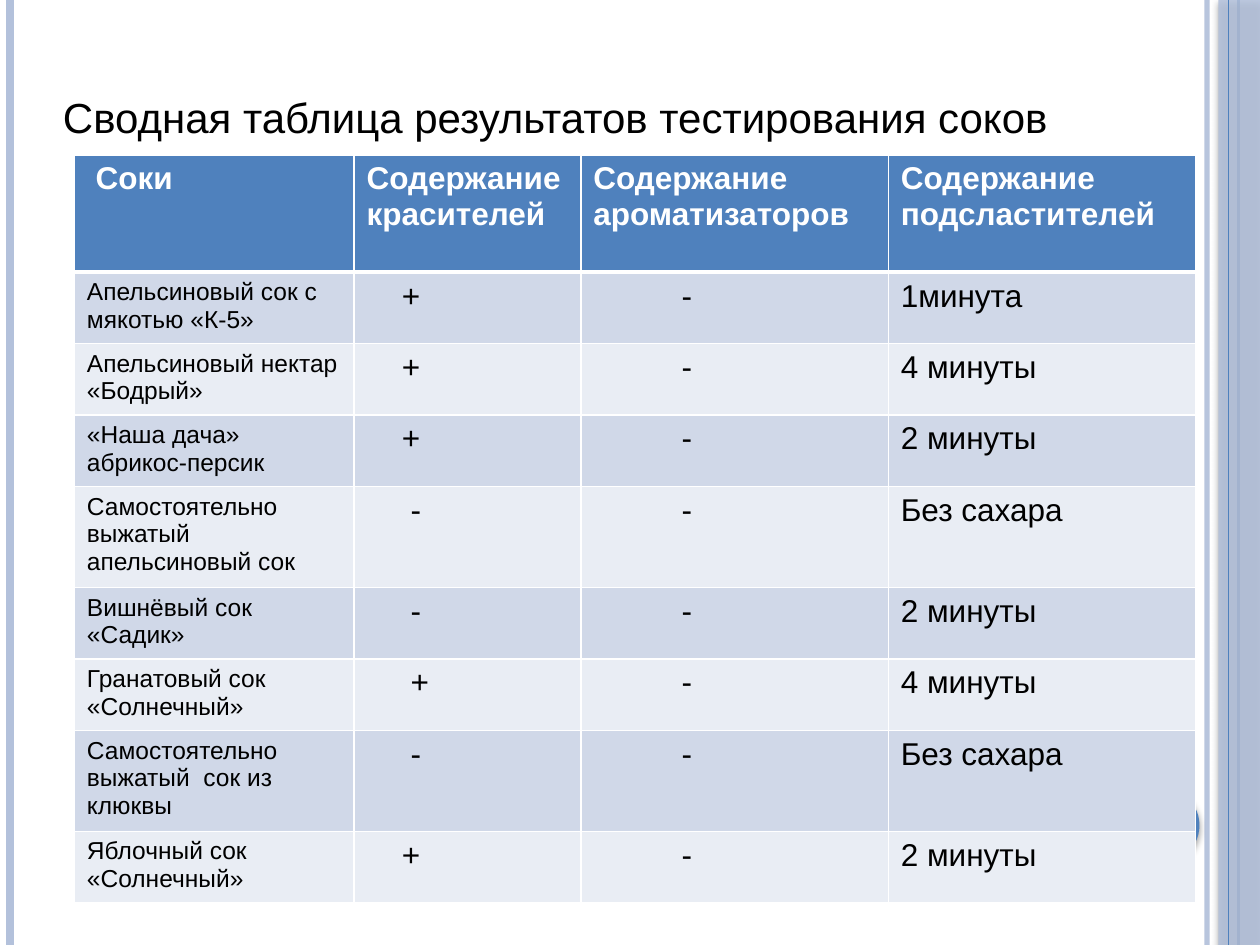
from collections import namedtuple
from dataclasses import dataclass

from lxml import etree
from pptx import Presentation
from pptx import util as u
from pptx.dml.color import RGBColor
from pptx.enum import shapes, text
from pptx.oxml.ns import qn

Box = namedtuple("Box", "left top width height")


@dataclass(frozen=True)
class Theme:
    font: str = "Arial"
    accent: str = "4F81BD"
    pale: str = "B3C1DB"
    bands: tuple = ("D0D8E8", "E9EDF4")
    light: str = "FFFFFF"
    ink: str = "000000"
    title_size: int = 24
    body_size: int = 18
    juice_size: int = 14


THEME = Theme()
COLUMNS, ROWS = 100, 75
UNIT = u.Inches(10) // COLUMNS
SPACE = 0.7

HEADINGS = [
    ["Соки"],
    ["Содержание", "красителей"],
    ["Содержание", "ароматизаторов"],
    ["Содержание", "подсластителей"],
]
JUICES = [
    ("Апельсиновый сок с мякотью «К-5»", "+", 4, "1минута"),
    ("Апельсиновый нектар «Бодрый»", "+", 4, "4 минуты"),
    ("«Наша дача» абрикос-персик", "+", 4, "2 минуты"),
    ("Самостоятельно выжатый апельсиновый сок", "-", 5, "Без сахара"),
    ("Вишнёвый сок «Садик»", "-", 5, "2 минуты"),
    ("Гранатовый сок «Солнечный»", "+", 5, "4 минуты"),
    ("Самостоятельно выжатый  сок из клюквы", "-", 5, "Без сахара"),
    ("Яблочный сок «Солнечный»", "+", 4, "2 минуты"),
]
TABLE_COLUMNS = [22.2, 18, 24.4, 24.4]
HEADER_ROW, SHORT_ROW, TALL_ROW = 9.3, 5.38, 7.57


def grid(count):
    return round(count * UNIT)


def place(box):
    return [grid(side) for side in box]


def color(value):
    return RGBColor.from_string(value)


def write(frame, lines, size, ink, bold=False):
    for index, line in enumerate(lines):
        paragraph = frame.paragraphs[0] if index == 0 else frame.add_paragraph()
        run = paragraph.add_run()
        run.text = line
        run.font.name = THEME.font
        run.font.size = u.Pt(size)
        run.font.bold = bold
        run.font.color.rgb = color(ink)


def add_alpha(parent, percent):
    etree.SubElement(parent, qn("a:alpha")).set("val", str(percent * 1000))


def add_rule(slide, box, share, ink, width):
    x = grid(box.left + box.width * share)
    rule = slide.shapes.add_connector(
        shapes.MSO_CONNECTOR.STRAIGHT, x, grid(box.top), x, grid(box.top + box.height)
    )
    rule.line.color.rgb = color(ink)
    rule.line.width = u.Pt(width)
    etree.SubElement(rule._element.spPr, qn("a:effectLst"))
    return rule


def add_shadowed(slide, kind, box, fill):
    shape = slide.shapes.add_shape(kind, *place(box))
    shape.fill.solid()
    shape.fill.fore_color.rgb = color(fill)
    shape.line.fill.background()
    shape.shadow.inherit = False
    effects = shape._element.spPr.find(qn("a:effectLst"))
    shadow = etree.SubElement(
        effects, qn("a:outerShdw"), blurRad=str(u.Pt(4)), dist=str(u.Pt(2)), dir="5400000"
    )
    tint = etree.SubElement(shadow, qn("a:srgbClr"), val=THEME.ink)
    add_alpha(tint, 40)
    return shape


def add_frame(slide, box):
    inner = add_rule(slide, box, 0.958, THEME.pale, 3)
    add_alpha(inner._element.spPr.find(".//" + qn("a:srgbClr")), 93)
    add_rule(slide, box, 0.008, THEME.pale, 4.5)
    add_rule(slide, box, 0.983, THEME.accent, 1.5)
    edge = Box(box.left + box.width * 0.967, box.top, box.width * 0.033, box.height)
    band = add_shadowed(slide, shapes.MSO_SHAPE.RECTANGLE, edge, THEME.pale)
    add_alpha(band._element.spPr.find(qn("a:solidFill"))[0], 87)
    add_rule(slide, box, 0.975, THEME.accent, 0.75)
    disc = Box(box.left + box.width * 0.892, box.top + box.height * 5 / 6, 6, 6)
    add_shadowed(slide, shapes.MSO_SHAPE.OVAL, disc, THEME.accent)


def add_title(slide, box):
    frame = slide.shapes.add_textbox(*place(box)).text_frame
    frame.word_wrap = True
    frame.vertical_anchor = text.MSO_ANCHOR.MIDDLE
    frame.margin_left = frame.margin_right = frame.margin_top = frame.margin_bottom = 0
    write(frame, ["Сводная таблица результатов тестирования соков"], THEME.title_size, THEME.ink)


def add_borders(cell, top, bottom):
    properties = cell._tc.get_or_add_tcPr()
    sides = (("a:lnL", 1), ("a:lnR", 1), ("a:lnT", top), ("a:lnB", bottom))
    for position, (side, width) in enumerate(sides):
        border = etree.Element(qn(side), w=str(u.Pt(width)))
        fill = etree.SubElement(border, qn("a:solidFill"))
        etree.SubElement(fill, qn("a:srgbClr"), val=THEME.light)
        properties.insert(position, border)


def fill_cell(cell, lines, size, ink, fill, spaces=0, bold=False, top=1, bottom=1):
    cell.fill.solid()
    cell.fill.fore_color.rgb = color(fill)
    cell.margin_left = grid(1 + spaces * SPACE)
    write(cell.text_frame, lines, size, ink, bold)
    add_borders(cell, top, bottom)


def add_results(slide, box):
    heights = [HEADER_ROW] + [
        TALL_ROW if juice.startswith("Самостоятельно") else SHORT_ROW for juice, *_ in JUICES
    ]
    table = slide.shapes.add_table(len(heights), len(TABLE_COLUMNS), *place(box)).table
    for column, width in zip(table.columns, TABLE_COLUMNS):
        column.width = grid(width)
    for row, height in zip(table.rows, heights):
        row.height = grid(height)
    for index, heading in enumerate(HEADINGS):
        fill_cell(table.cell(0, index), heading, THEME.body_size, THEME.light, THEME.accent,
                  spaces=int(index == 0), bold=True, bottom=3)
    for number, (juice, dye, dye_spaces, sweetener) in enumerate(JUICES, 1):
        entries = (
            (juice, THEME.juice_size, 0),
            (dye, THEME.body_size, dye_spaces),
            ("-", THEME.body_size, 10),
            (sweetener, THEME.body_size, 0),
        )
        for index, (entry, size, spaces) in enumerate(entries):
            fill_cell(table.cell(number, index), [entry], size, THEME.ink,
                      THEME.bands[(number - 1) % 2], spaces, top=3 if number == 1 else 1)


def main():
    deck = Presentation()
    deck.slide_width, deck.slide_height = grid(COLUMNS), grid(ROWS)
    slide = deck.slides.add_slide(deck.slide_layouts[6])
    add_frame(slide, Box(0, 0, COLUMNS, ROWS))
    add_title(slide, Box(5, 3, 81.7, 12.5))
    add_results(slide, Box(5.9, 12.3, sum(TABLE_COLUMNS), 56.8))
    deck.save("out.pptx")


if __name__ == "__main__":
    main()
